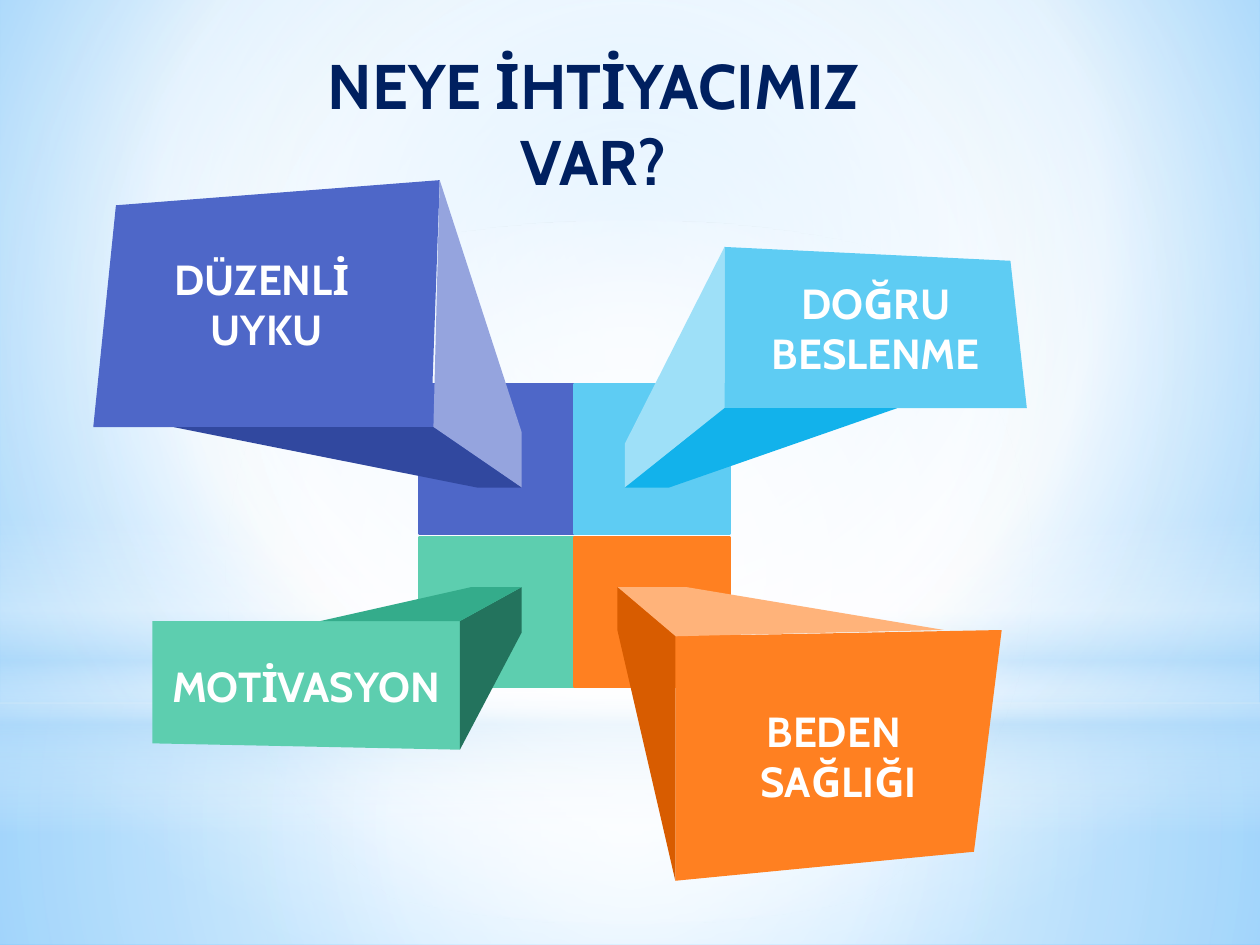
from lxml import etree
from pptx import Presentation
from pptx import util as u
from pptx.dml.color import RGBColor
from pptx.enum import shapes, text
from pptx.oxml.ns import qn

FONT = "Cabin"
TITLE = "NEYE İHTİYACIMIZ VAR?"
TITLE_BOX = (2.27, 0.32, 4.88, 1.31)
RECT, OVAL = shapes.MSO_SHAPE.RECTANGLE, shapes.MSO_SHAPE.OVAL
CENTRE = (50, 50, 50, 50)

# Gradient stops are (position %, colour, opacity %); positions are in inches
BACKDROP = [(0, "9ED5FF", 100), (60, "FFFFFF", 100), (100, "5BB9FF", 100)]
GLOWS = [
    (RECT, (0, 5.58, 10, 1.92), CENTRE,
     [(0, "FFFFFF", 91), (37, "FFFFFF", 76), (100, "B4DCFA", 79)]),
    (RECT, (0, 0, 10, 5.58), CENTRE,
     [(0, "FFFFFF", 89), (48, "FFFFFF", 62), (100, "B4DCFA", 79)]),
    (RECT, (0, 4.12, 10, 2.5), None,
     [(0, "FFFFFF", 0), (29, "FFFFFF", 30), (45, "B4DCFA", 40),
      (55, "FFFFFF", 26), (65, "B4DCFA", 60), (100, "FFFFFF", 0)]),
    (OVAL, (0, 1.75, 10, 5.58), CENTRE,
     [(0, "FFFFFF", 100), (56, "FFFFFF", 0)]),
]

# One block per need, row by row: front face colour, lines, then each face's corners
BLOCKS = [
    ("4E67C8", ["DÜZENLİ ", "UYKU"], [
        ("4E67C8", [(3.49, 1.43), (3.42, 3.39), (0.74, 3.39), (0.92, 1.63)]),
        ("95A4DE", [(3.49, 1.43), (4.14, 3.43), (4.14, 3.87), (3.44, 3.39)]),
        ("31489F", [(1.38, 3.39), (3.44, 3.39), (4.14, 3.87), (3.79, 3.87)])]),
    ("5ECCF3", ["DOĞRU", "BESLENME"], [
        ("5ECCF3", [(5.75, 1.96), (8.02, 2.07), (8.15, 3.24), (5.75, 3.24)]),
        ("9EE0F8", [(5.75, 1.96), (5.75, 3.24), (4.96, 3.87), (4.96, 3.52)]),
        ("12B2EB", [(5.75, 3.24), (7.12, 3.24), (5.31, 3.87), (4.96, 3.87)])]),
    ("5DCEAF", ["MOTİVASYON"], [
        ("5DCEAF", [(1.21, 4.93), (3.65, 4.93), (3.65, 5.95), (1.21, 5.9)]),
        ("23735D", [(4.14, 4.66), (4.14, 5.02), (3.65, 5.95), (3.65, 4.93)]),
        ("34AC8B", [(3.74, 4.66), (4.14, 4.66), (3.65, 4.93), (2.54, 4.93)])]),
    ("FF8021", ["BEDEN ", "SAĞLIĞI"], [
        ("FF8021", [(7.95, 5), (7.73, 6.76), (5.36, 6.99), (5.36, 5.05)]),
        ("FFB37A", [(4.9, 4.66), (5.45, 4.66), (7.49, 5), (5.36, 5.05)]),
        ("D85C00", [(4.9, 4.66), (5.36, 5.05), (5.36, 6.99), (4.9, 5)])]),
]
TILE_LEFT, TILE_TOP, TILE_W, TILE_H, ROW_STEP = 3.33, 3.05, 1.23, 1.19, 1.21


def cm(inches):
    return u.Cm(inches * 2.54)


def rgb(color):
    return RGBColor.from_string(color)


def set_gradient(fill, owner, stops, focus):
    """Fill with see-through stops, round a focus or straight down."""
    fill.gradient()
    grad = next(owner.iter(qn("a:gradFill")))
    for child in list(grad):
        grad.remove(child)
    stop_list = etree.SubElement(grad, qn("a:gsLst"))
    for pos, color, opacity in stops:
        gs = etree.SubElement(stop_list, qn("a:gs"), pos=str(pos * 1000))
        clr = etree.SubElement(gs, qn("a:srgbClr"), val=color)
        if opacity < 100:
            etree.SubElement(clr, qn("a:alpha"), val=str(opacity * 1000))
    if focus:
        way = etree.SubElement(grad, qn("a:path"), path="circle")
        sides = {k: str(v * 1000) for k, v in zip("ltrb", focus)}
        etree.SubElement(way, qn("a:fillToRect"), sides)
    else:
        etree.SubElement(grad, qn("a:lin"), ang="5400000", scaled="0")


def add_preset(s, kind, box):
    sp = s.shapes.add_shape(kind, *map(cm, box))
    sp.shadow.inherit = False
    return sp


def add_face(s, color, corners):
    start, *rest = [(cm(x), cm(y)) for x, y in corners]
    builder = s.shapes.build_freeform(*start)
    builder.add_line_segments(rest, close=True)
    sp = builder.convert_to_shape()
    sp.shadow.inherit = False
    sp.fill.solid()
    sp.fill.fore_color.rgb = rgb(color)
    sp.line.fill.background()
    return sp


def write(tf, lines, size, color):
    tf.word_wrap = True
    for i, line in enumerate(lines):
        p = tf.add_paragraph() if i else tf.paragraphs[0]
        p.alignment = text.PP_ALIGN.CENTER
        r = p.add_run()
        r.text = line
        r.font.name, r.font.size, r.font.bold = FONT, u.Pt(size), True
        r.font.color.rgb = rgb(color)


def main():
    prs = Presentation()
    prs.slide_width, prs.slide_height = cm(10), cm(7.5)
    s = prs.slides.add_slide(prs.slide_layouts[6])

    # Backdrop and soft glows
    bg = s.background
    set_gradient(bg.fill, s.element, BACKDROP, (20, 10, 20, 60))
    for kind, box, focus, stops in GLOWS:
        sp = add_preset(s, kind, box)
        set_gradient(sp.fill, sp.element, stops, focus)
        sp.line.fill.background()

    # Two by two tiles in the middle
    for i, (color, _, _) in enumerate(BLOCKS):
        row, col = divmod(i, 2)
        sp = add_preset(s, RECT, (TILE_LEFT + col * TILE_W,
                                  TILE_TOP + row * ROW_STEP, TILE_W, TILE_H))
        sp.fill.solid()
        sp.fill.fore_color.rgb = rgb(color)
        sp.line.color.rgb = rgb(color)
        sp.line.width = u.Pt(1.25)

    # Blocks growing out of the tiles, with the label on the front face
    for _, lines, faces in BLOCKS:
        front, *_ = [add_face(s, *face) for face in faces]
        front.text_frame.vertical_anchor = text.MSO_ANCHOR.MIDDLE
        write(front.text_frame, lines, 24, "FFFFFF")

    # Title
    tf = s.shapes.add_textbox(*map(cm, TITLE_BOX)).text_frame
    write(tf, [TITLE], 36, "002060")
    tf.auto_size = text.MSO_AUTO_SIZE.SHAPE_TO_FIT_TEXT

    prs.save("out.pptx")


if __name__ == "__main__":
    main()
